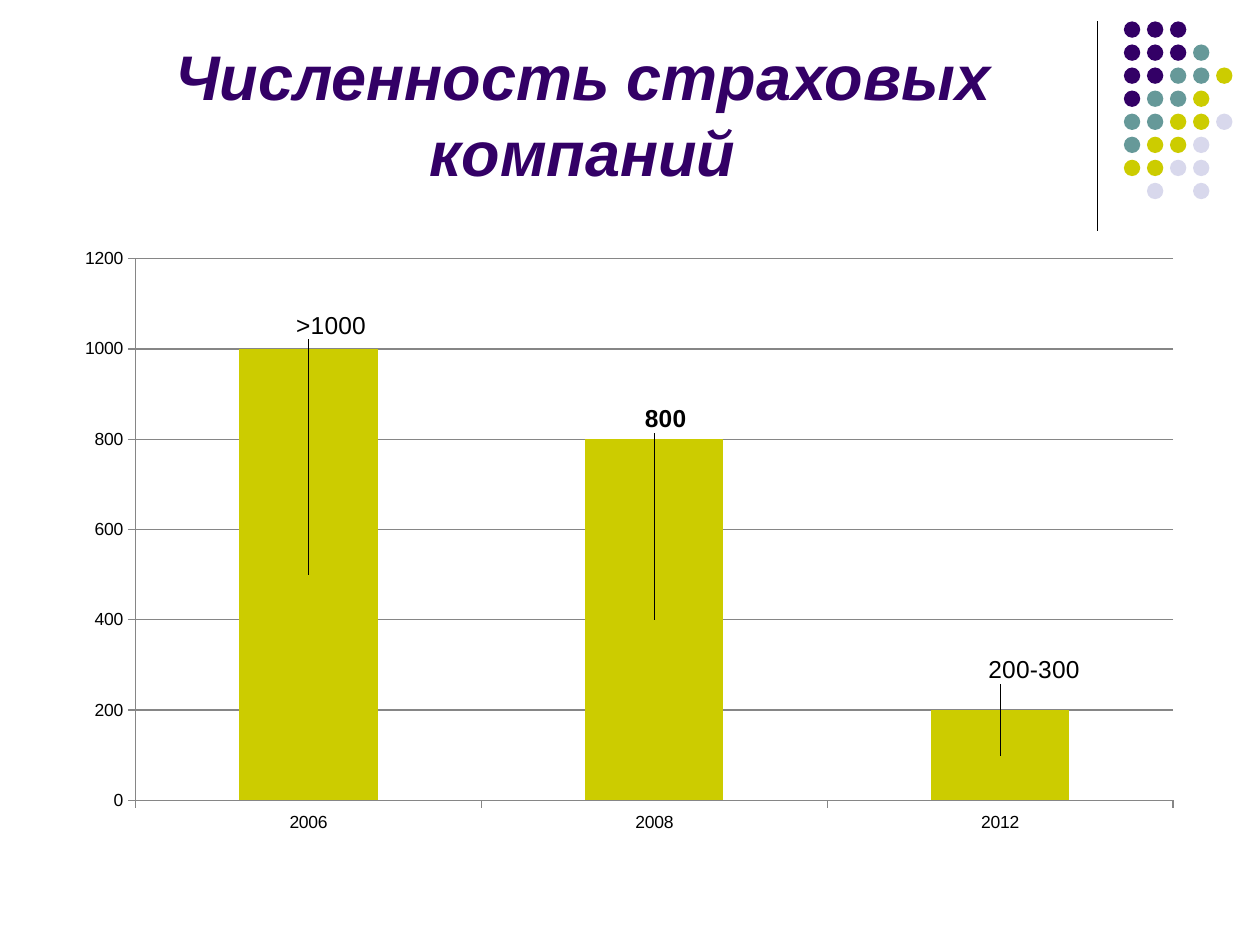
from lxml import etree
from pptx import Presentation
from pptx import util as u
from pptx.chart.data import CategoryChartData
from pptx.dml.color import RGBColor
from pptx.enum import chart as charts, shapes, text
from pptx.oxml import parse_xml
from pptx.oxml.ns import nsdecls, qn

PURPLE = RGBColor(0x33, 0x00, 0x66)
TEAL = RGBColor(0x66, 0x99, 0x99)
OLIVE = RGBColor(0xCC, 0xCC, 0x00)
LAVENDER = RGBColor(0xD8, 0xD8, 0xEC)
BLACK = RGBColor(0x00, 0x00, 0x00)
GRAY = RGBColor(0x86, 0x86, 0x86)

DOT_COLORS = {"P": PURPLE, "T": TEAL, "O": OLIVE, "L": LAVENDER}
DOT_ROWS = ["PPP", "PPPT", "PPTTO", "PTTO", "TTOOL", "TOOL", "OOLL", " L L"]
YEARS = ["2006", "2008", "2012"]
COMPANIES = [1000, 800, 200]
LABELS = [(">1000", 0.02, -0.41), (None, 0.01, -0.33), ("200-300", 0.03, -0.14)]


def layout_xml(target="", **values):
    items = "".join(f'<c:{key} val="{value}"/>' for key, value in values.items())
    return parse_xml(f'<c:layout {nsdecls("c")}><c:manualLayout>{target}{items}'
                     '</c:manualLayout></c:layout>')


class SlideBuilder:
    font_name = "Arial"

    def __init__(self, slide):
        self.slide = slide

    def format_font(self, font, color=BLACK, **values):
        for name, value in {"name": self.font_name, **values}.items():
            setattr(font, name, value)
        font.color.rgb = color

    def title(self, wording, left, top, width, height):
        shape = self.slide.shapes.title
        for name, value in dict(left=left, top=top, width=width, height=height).items():
            setattr(shape, name, u.Inches(value))
        frame = shape.text_frame
        frame.text = wording
        frame_format = {"word_wrap": True, "auto_size": text.MSO_AUTO_SIZE.NONE,
                        "vertical_anchor": text.MSO_ANCHOR.BOTTOM}
        for name, value in frame_format.items():
            setattr(frame, name, value)
        paragraph = frame.paragraphs[0]
        paragraph.alignment = text.PP_ALIGN.CENTER
        self.format_font(paragraph.runs[0].font, PURPLE, size=u.Pt(36), bold=True, italic=True)

    def divider(self, x, top, bottom):
        line = self.slide.shapes.add_connector(
            shapes.MSO_CONNECTOR.STRAIGHT, *map(u.Inches, (x, top, x, bottom)))
        line.line.color.rgb = BLACK
        line.line.width = u.Pt(0.75)
        etree.SubElement(line._element.spPr, qn("a:effectLst"))

    def dot_grid(self, rows, left, top, pitch, size):
        group = self.slide.shapes.add_group_shape()
        for row, codes in enumerate(rows):
            for column, code in enumerate(codes):
                if code in DOT_COLORS:
                    dot = group.shapes.add_shape(
                        shapes.MSO_SHAPE.OVAL, u.Inches(left + column * pitch),
                        u.Inches(top + row * pitch), u.Inches(size), u.Inches(size))
                    dot.shadow.inherit = False
                    dot.fill.solid()
                    dot.fill.fore_color.rgb = DOT_COLORS[code]
                    dot.line.fill.background()

    def column_chart(self, categories, values, labels, *box):
        data = CategoryChartData()
        data.categories = categories
        data.add_series("Series 1", values)
        chart = self.slide.shapes.add_chart(
            charts.XL_CHART_TYPE.COLUMN_STACKED, *map(u.Inches, box), data).chart
        chart.has_legend = chart.has_title = False
        self.format_font(chart.font, size=u.Pt(10))
        self.axes(chart)
        plot = chart.plots[0]
        for name, value in {"gap_width": 150, "overlap": 100, "vary_by_categories": False}.items():
            setattr(plot, name, value)
        series = plot.series[0]
        series.format.fill.solid()
        series.format.fill.fore_color.rgb = OLIVE
        series.data_labels.show_value = True
        self.format_font(series.data_labels.font, size=u.Pt(14), bold=True)
        for index, label in enumerate(labels):
            self.point_label(series, index, *label)
        area = chart._chartSpace.chart.plotArea
        for old in area.findall(qn("c:layout")):
            area.remove(old)
        area.insert(0, layout_xml('<c:layoutTarget val="inner"/>', xMode="edge",
                                  yMode="edge", x=0.064, y=0.036, w=0.915, h=0.892))

    def axes(self, chart):
        for axis in (chart.category_axis, chart.value_axis):
            axis.major_tick_mark = charts.XL_TICK_MARK.OUTSIDE
            axis.minor_tick_mark = charts.XL_TICK_MARK.NONE
            axis.format.line.color.rgb = GRAY
        value_format = {"minimum_scale": 0, "maximum_scale": 1200, "major_unit": 200,
                        "has_major_gridlines": True}
        for name, value in value_format.items():
            setattr(chart.value_axis, name, value)
        chart.value_axis.major_gridlines.format.line.color.rgb = GRAY

    def point_label(self, series, index, wording, x, y):
        label = series.points[index].data_label
        if wording:
            label.text_frame.text = wording
            font = label.text_frame.paragraphs[0].runs[0].font
        else:
            font = label.font
        self.format_font(font, size=u.Pt(14), bold=not wording)
        label.position = charts.XL_LABEL_POSITION.CENTER
        element = series.data_labels._element.findall(qn("c:dLbl"))[index]
        element.find(qn("c:idx")).addnext(layout_xml(x=x, y=y))


def main():
    presentation = Presentation()
    presentation.slide_width = u.Inches(10)
    presentation.slide_height = u.Inches(7.5)
    title_only = presentation.slide_layouts.get_by_name("Title Only")
    builder = SlideBuilder(presentation.slides.add_slide(title_only))
    builder.divider(8.71, 0.17, 1.83)
    builder.dot_grid(DOT_ROWS, 8.92, 0.17, 0.183, 0.13)
    builder.title("Численность страховых компаний", 0.5, 0.13, 8.25, 1.42)
    builder.column_chart(YEARS, COMPANIES, LABELS, 0.5, 1.88, 9, 4.82)
    presentation.save("out.pptx")


if __name__ == "__main__":
    main()
